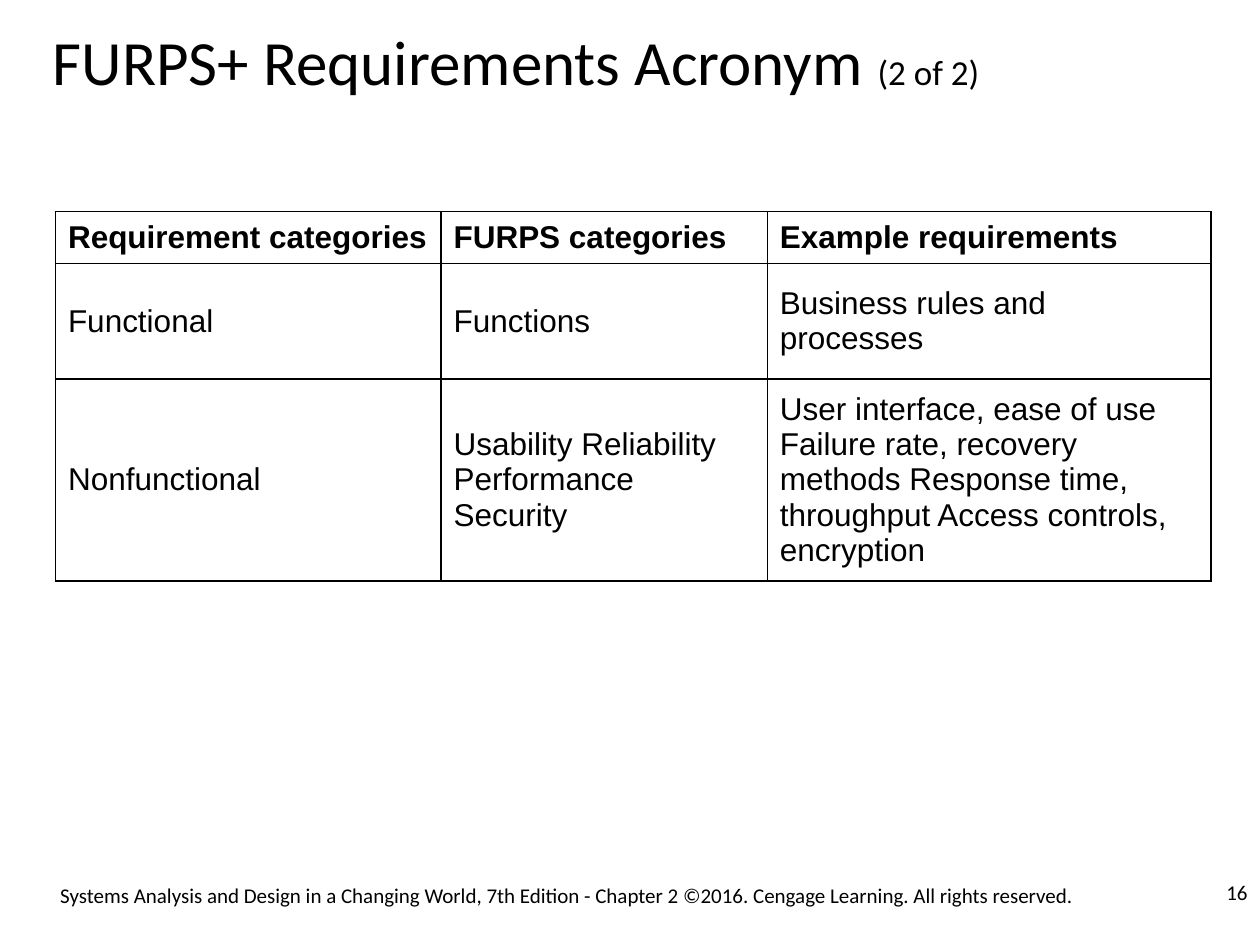
"""Build the FURPS+ requirements slide with its category table."""
from lxml.etree import SubElement
from pptx import Presentation
from pptx.dml.color import RGBColor
from pptx.enum.text import MSO_ANCHOR, PP_ALIGN
from pptx.oxml.ns import qn
from pptx.util import Inches, Pt

INK, PAPER = "000000", "FFFFFF"


def style(font, name, size, bold=False):
    font.name, font.size, font.bold = name, Pt(size), bold
    font.color.rgb = RGBColor.from_string(INK)


def add_text(left, top, width, height, text, size):
    frame = slide.shapes.add_textbox(*map(Inches, (left, top, width, height))).text_frame
    frame.word_wrap = True
    paragraph = frame.paragraphs[0]
    paragraph.text = text
    style(paragraph.font, "Calibri", size)
    return frame


prs = Presentation()
prs.slide_width, prs.slide_height = Inches(10), Inches(7.5)
slide = prs.slides.add_slide(prs.slide_layouts[6])
slide.background.fill.solid()
slide.background.fill.fore_color.rgb = RGBColor.from_string(PAPER)

copyright_line = add_text(
    0.38, 6.98, 8.54, 0.2,
    "Systems Analysis and Design in a Changing World, 7th Edition - Chapter 2 "
    "©2016. Cengage Learning. All rights reserved.", 12)
copyright_line.paragraphs[0].line_spacing = 0.9

title = add_text(0.42, 0.25, 9.17, 0.55, "FURPS+ Requirements Acronym ", 36)
title.margin_left = title.margin_right = title.margin_top = title.margin_bottom = 0
title.paragraphs[0].line_spacing = 0.9
part = title.paragraphs[0].add_run()
part.text = "(2 of 2)"
part.font.size = Pt(20)

columns = [3.06, 2.59, 3.52]
rows = [0.41, 0.92, 1.5]
requirements = [
    ["Requirement categories", "FURPS categories", "Example requirements"],
    ["Functional", "Functions", "Business rules and processes"],
    ["Nonfunctional", "Usability Reliability\nPerformance Security",
     "User interface, ease of use Failure rate, recovery methods "
     "Response time, throughput Access controls, encryption"],
]
table = slide.shapes.add_table(
    len(rows), len(columns), Inches(0.44), Inches(1.68),
    Inches(sum(columns)), Inches(sum(rows))).table
table.first_row = table.horz_banding = False
for column, width in zip(table.columns, columns):
    column.width = Inches(width)

for r, (height, entries) in enumerate(zip(rows, requirements)):
    table.rows[r].height = Inches(height)
    for c, entry in enumerate(entries):
        cell = table.cell(r, c)
        cell.text = entry
        cell.vertical_anchor = MSO_ANCHOR.MIDDLE
        for paragraph in cell.text_frame.paragraphs:
            style(paragraph.font, "Arial", 18, bold=r == 0)
        properties = cell._tc.get_or_add_tcPr()
        for side in ("a:lnL", "a:lnR", "a:lnT", "a:lnB"):
            border = SubElement(properties, qn(side), w=str(Pt(1)))
            SubElement(SubElement(border, qn("a:solidFill")), qn("a:srgbClr"), val=INK)
        cell.fill.background()

page_number = add_text(8.75, 6.83, 1.25, 0.5, "16", 12)
page_number.vertical_anchor = MSO_ANCHOR.MIDDLE
page_number.paragraphs[0].alignment = PP_ALIGN.RIGHT

prs.save("out.pptx")
